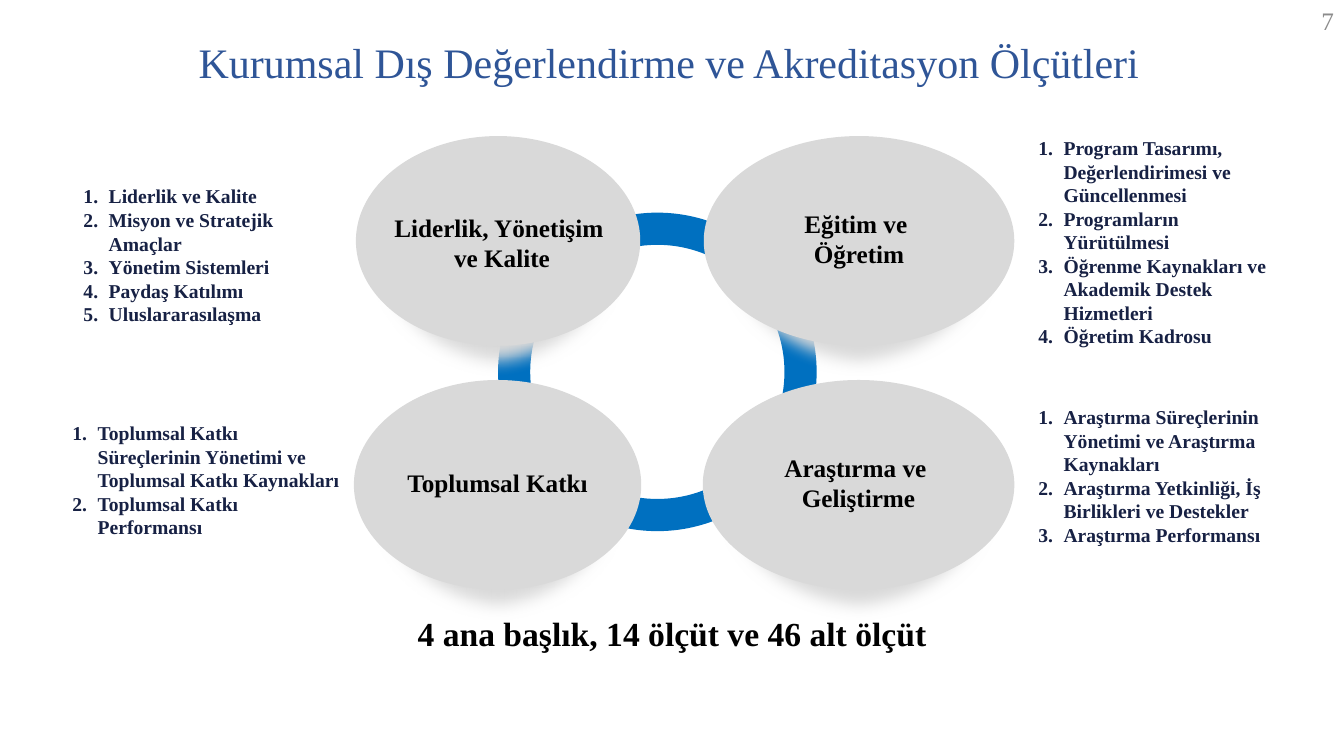
"""Builds the slide on institutional external evaluation and accreditation criteria."""
from lxml.etree import SubElement
from pptx import Presentation
from pptx.dml.color import RGBColor
from pptx.enum.shapes import MSO_SHAPE as Shape
from pptx.enum.text import MSO_ANCHOR as Anchor, PP_ALIGN as Align
from pptx.oxml.ns import qn
from pptx.util import Inches, Pt

COLORS = {
    "ring": "0070C0",
    "oval": "D9D9D9",
    "title": "2F5597",
    "list": "172144",
    "text": "000000",
    "number": "8C8C8C",
}

deck = Presentation()
deck.slide_width, deck.slide_height = Inches(13.33), Inches(7.5)
page = deck.slides.add_slide(deck.slide_layouts[6])


def add_shape(kind, place, color):
    shape = page.shapes.add_shape(kind, *map(Inches, place))
    shape.shadow.inherit = False
    shape.fill.solid()
    shape.fill.fore_color.rgb = RGBColor.from_string(COLORS[color])
    shape.line.fill.background()
    return shape


def add_text(place, lines, size, color, bold=True, align=Align.CENTER,
             anchor=Anchor.TOP, wrap=True, numbered=False):
    box = page.shapes.add_textbox(*map(Inches, place))
    frame = box.text_frame
    frame.word_wrap = wrap
    frame.vertical_anchor = anchor
    frame.text = "\n".join(lines)
    for para in frame.paragraphs:
        para.alignment = align
        if numbered:
            props = para._p.get_or_add_pPr()
            props.set("marL", str(Inches(0.25)))
            props.set("indent", str(-Inches(0.25)))
            SubElement(props, qn("a:buFont"), typeface="+mj-lt")
            SubElement(props, qn("a:buAutoNum"), type="arabicPeriod")
        for span in para.runs:
            span.font.name = "Times New Roman"
            span.font.size = Pt(size)
            span.font.bold = bold
            span.font.color.rgb = RGBColor.from_string(COLORS[color])


ring = add_shape(Shape.DONUT, (4.94, 2.11, 3.16, 3.16), "ring")
ring.adjustments[0] = 0.101

headings = [
    ((3.53, 1.35, 2.82), (3.8, 2.05, 2.36, 0.71), ["Liderlik, Yönetişim ", "ve Kalite"]),
    ((6.98, 1.35, 3.08), (7.87, 2.01, 1.3, 0.71), ["Eğitim ve ", "Öğretim"]),
    ((3.51, 3.77, 2.85), (3.93, 4.59, 2.01, 0.4), ["Toplumsal Katkı"]),
    ((6.97, 3.77, 3.09), (7.67, 4.43, 1.69, 0.71), ["Araştırma ve ", "Geliştirme"]),
]
for (left, top, width), label_place, label in headings:
    shade = add_shape(Shape.OVAL, (left + 0.13, top + 0.22, width - 0.26, 2.18), "oval")
    effects = shade._element.spPr.find(qn("a:effectLst"))
    SubElement(effects, qn("a:softEdge"), rad=str(Pt(12)))
    add_shape(Shape.OVAL, (left, top, width, 2.08), "oval")
    add_text(label_place, label, 18, "text", anchor=Anchor.MIDDLE, wrap=False)

criteria = [
    ((0.73, 1.78, 2.47, 1.75), [
        "Liderlik ve Kalite",
        "Misyon ve Stratejik Amaçlar",
        "Yönetim Sistemleri",
        "Paydaş Katılımı",
        "Uluslararasılaşma",
    ]),
    ((10.2, 1.3, 2.52, 2.22), [
        "Program Tasarımı, Değerlendirimesi ve Güncellenmesi",
        "Programların Yürütülmesi",
        "Öğrenme Kaynakları ve Akademik Destek Hizmetleri",
        "Öğretim Kadrosu",
    ]),
    ((0.62, 4.13, 2.91, 1.51), [
        "Toplumsal Katkı Süreçlerinin Yönetimi ve Toplumsal Katkı Kaynakları",
        "Toplumsal Katkı Performansı",
    ]),
    ((10.2, 3.97, 2.92, 1.75), [
        "Araştırma Süreçlerinin Yönetimi ve Araştırma Kaynakları",
        "Araştırma Yetkinliği, İş Birlikleri ve Destekler",
        "Araştırma Performansı",
    ]),
]
for place, items in criteria:
    add_text(place, items, 14, "list", align=Align.LEFT, numbered=True)

add_text((0.77, 0.31, 11.84, 0.61),
         ["Kurumsal Dış Değerlendirme ve Akreditasyon Ölçütleri "],
         30, "title", bold=False)
add_text((3.33, 6.03, 6.67, 0.5), ["4 ana başlık, 14 ölçüt ve 46 alt ölçüt"], 24, "text")
add_text((10.33, 0, 3, 0.4), ["7"], 18, "number", bold=False,
         align=Align.RIGHT, anchor=Anchor.MIDDLE)

deck.save("out.pptx")
